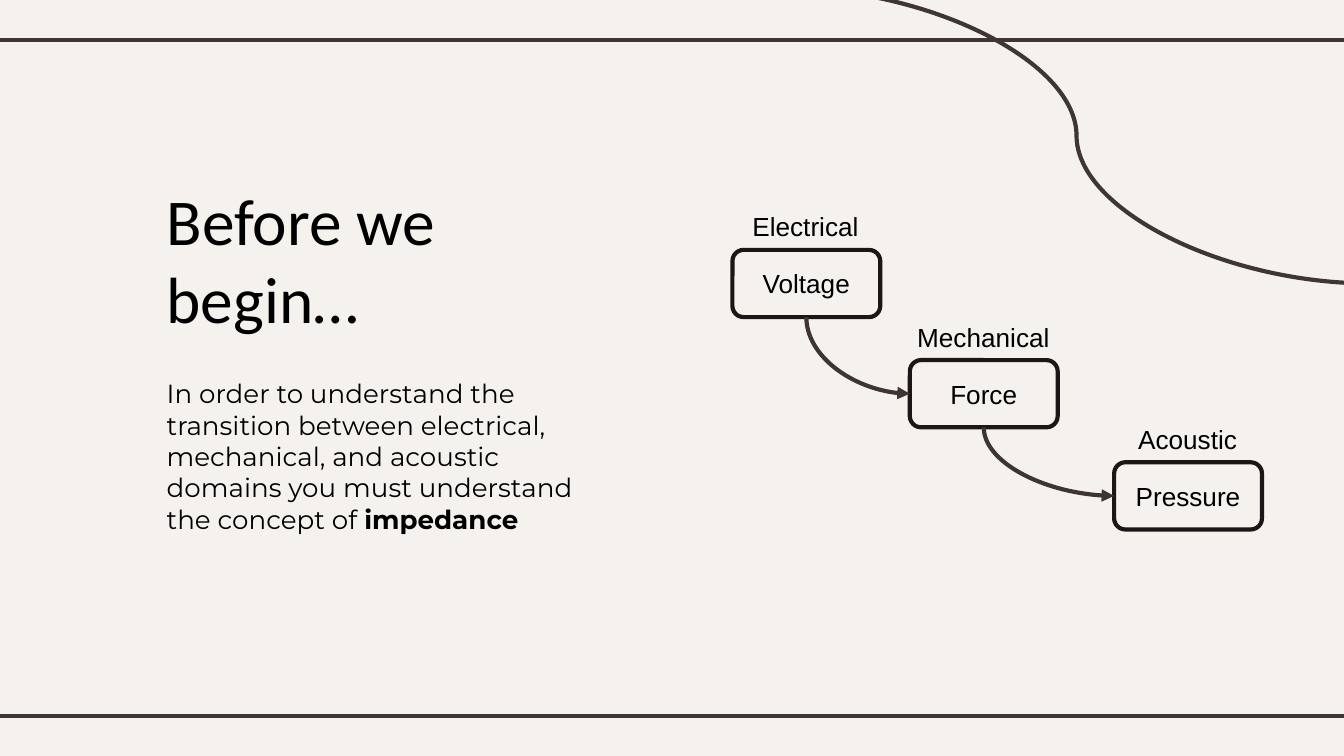
"""Build the impedance introduction slide with its three-domain signal chain."""
import pptx
import pptx.util
import pptx.dml.color
import pptx.enum.shapes
import pptx.enum.text
import pptx.oxml
import pptx.oxml.ns

INK, EDGE, ARROW, TEXT, PAPER = "3F3533", "1C1716", "3E3432", "000000", "F5F2EE"
WIDTH, MARGIN, OVERHANG = 10, 0.3, 0.08
HEIGHT = WIDTH * 9 / 16
TITLE = [("Before we begin…", False)]
BODY = [
    ("In order to understand the transition between electrical, mechanical, "
     "and acoustic domains you must understand the concept of ", False),
    ("impedance", True),
]
BOX_W, BOX_H, LABEL_H = 1.1, 0.5, 0.34
STAGES = [  # domain, quantity, box left, box top, label width
    ("Electrical", "Voltage", 5.45, 1.86, 1.0),
    ("Mechanical", "Force", 6.77, 2.68, 1.19),
    ("Acoustic", "Pressure", 8.29, 3.44, 0.94),
]
COLUMN_X, COLUMN_Y, ROW_H = 1.14, 1.24, 1.47
ANCHOR, ALIGN = pptx.enum.text.MSO_ANCHOR, pptx.enum.text.PP_ALIGN
FIT = pptx.enum.text.MSO_AUTO_SIZE
KIND = pptx.enum.shapes.MSO_CONNECTOR
NS = pptx.oxml.ns.nsdecls("a")
inch = pptx.util.Inches


def rgb(value):
    """Return a colour from a hex string."""
    return pptx.dml.color.RGBColor.from_string(value)


def assign(target, values):
    """Set attributes from a dict."""
    for name, value in values.items():
        setattr(target, name, value)


def place(shape, left, top, width, height):
    """Set position and size in inches."""
    assign(shape, dict(left=inch(left), top=inch(top),
                       width=inch(width), height=inch(height)))


def write(shape, runs, font, size, align, frame, after=0):
    """Fill a shape with one formatted paragraph."""
    tf = shape.text_frame
    assign(tf, frame)
    p = tf.paragraphs[0]
    assign(p, dict(alignment=align, line_spacing=1.0,
                   space_before=pptx.util.Pt(0), space_after=pptx.util.Pt(after)))
    for text, bold in runs:
        r = p.add_run()
        r.text = text
        assign(r.font, dict(name=font, size=pptx.util.Pt(size), bold=bold))
        r.font.color.rgb = rgb(TEXT)


def outline(shape, color):
    """Draw a line of the common weight."""
    shape.line.color.rgb = rgb(color)
    shape.line.width = pptx.util.Pt(2.25)


def connect(s, kind, start, end, color):
    """Add a connector without a shadow."""
    c = s.shapes.add_connector(kind, *map(inch, start + end))
    outline(c, color)
    c._element.spPr.append(pptx.oxml.parse_xml(f"<a:effectLst {NS}/>"))
    return c


def bend(s, source, target):
    """Curve an arrow from a box's bottom to the next box's left side."""
    x1, y1 = (source.left + source.width / 2) / inch(1), (source.top + source.height) / inch(1)
    x2, y2 = target.left / inch(1), (target.top + target.height / 2) / inch(1)
    c = connect(s, KIND.CURVE, (x1, y1), (x2, y2), ARROW)
    c.begin_connect(source, 2)
    c.end_connect(target, 1)
    across, down = x2 - x1, y2 - y1
    place(c, (x1 + x2 - down) / 2, (y1 + y2 - across) / 2, down, across)
    spPr = c._element.spPr
    xfrm = spPr.find(pptx.oxml.ns.qn("a:xfrm"))
    xfrm.set("rot", str(270 * 60000))
    xfrm.set("flipH", "1")
    spPr.find(pptx.oxml.ns.qn("a:prstGeom")).set("prst", "curvedConnector2")
    line = spPr.find(pptx.oxml.ns.qn("a:ln"))
    line.append(pptx.oxml.parse_xml(f'<a:tailEnd {NS} type="triangle"/>'))


def add_box(s, quantity, left, top):
    """Add an outlined box naming the quantity."""
    sp = s.shapes.add_shape(pptx.enum.shapes.MSO_SHAPE.ROUNDED_RECTANGLE,
                            *map(inch, (left, top, BOX_W, BOX_H)))
    sp.shadow.inherit = False
    sp.fill.background()
    outline(sp, EDGE)
    write(sp, [(quantity, False)], "Arial", 14, ALIGN.CENTER,
          dict(vertical_anchor=ANCHOR.MIDDLE))
    return sp


def add_label(s, domain, left, top, width):
    """Add the domain label centred above its box."""
    label = s.shapes.add_textbox(*map(inch, (
        left + (BOX_W - width) / 2, top - LABEL_H, width, LABEL_H)))
    write(label, [(domain, False)], "Arial", 14, ALIGN.LEFT,
          dict(word_wrap=False, auto_size=FIT.SHAPE_TO_FIT_TEXT))


def main():
    """Assemble and save the slide."""
    prs = pptx.Presentation()
    prs.slide_width, prs.slide_height = inch(WIDTH), inch(HEIGHT)
    s = prs.slides.add_slide(prs.slide_layouts[0])
    s.background.fill.solid()
    s.background.fill.fore_color.rgb = rgb(PAPER)

    for y in (MARGIN, HEIGHT - MARGIN):
        connect(s, KIND.STRAIGHT, (-OVERHANG, y), (WIDTH + OVERHANG, y), INK)
    connect(s, KIND.CURVE, (5.82, -0.09), (10.2, 2.11), INK)

    frame = dict.fromkeys(("margin_left", "margin_top", "margin_right", "margin_bottom"), inch(0.1))
    frame.update(word_wrap=True, auto_size=FIT.NONE, vertical_anchor=ANCHOR.TOP)
    title, body = s.placeholders
    place(title, COLUMN_X, COLUMN_Y, 3.42, ROW_H)
    write(title, TITLE, "Calibri", 35, ALIGN.LEFT, frame)
    place(body, COLUMN_X, COLUMN_Y + ROW_H, 3.3, ROW_H)
    write(body, BODY, "Montserrat", 14, ALIGN.LEFT, frame, after=10)

    boxes = [add_box(s, quantity, left, top) for _, quantity, left, top, _ in STAGES]
    for source, target in zip(boxes, boxes[1:]):
        bend(s, source, target)
    for domain, _, left, top, width in STAGES:
        add_label(s, domain, left, top, width)
    prs.save("out.pptx")


if __name__ == "__main__":
    main()
